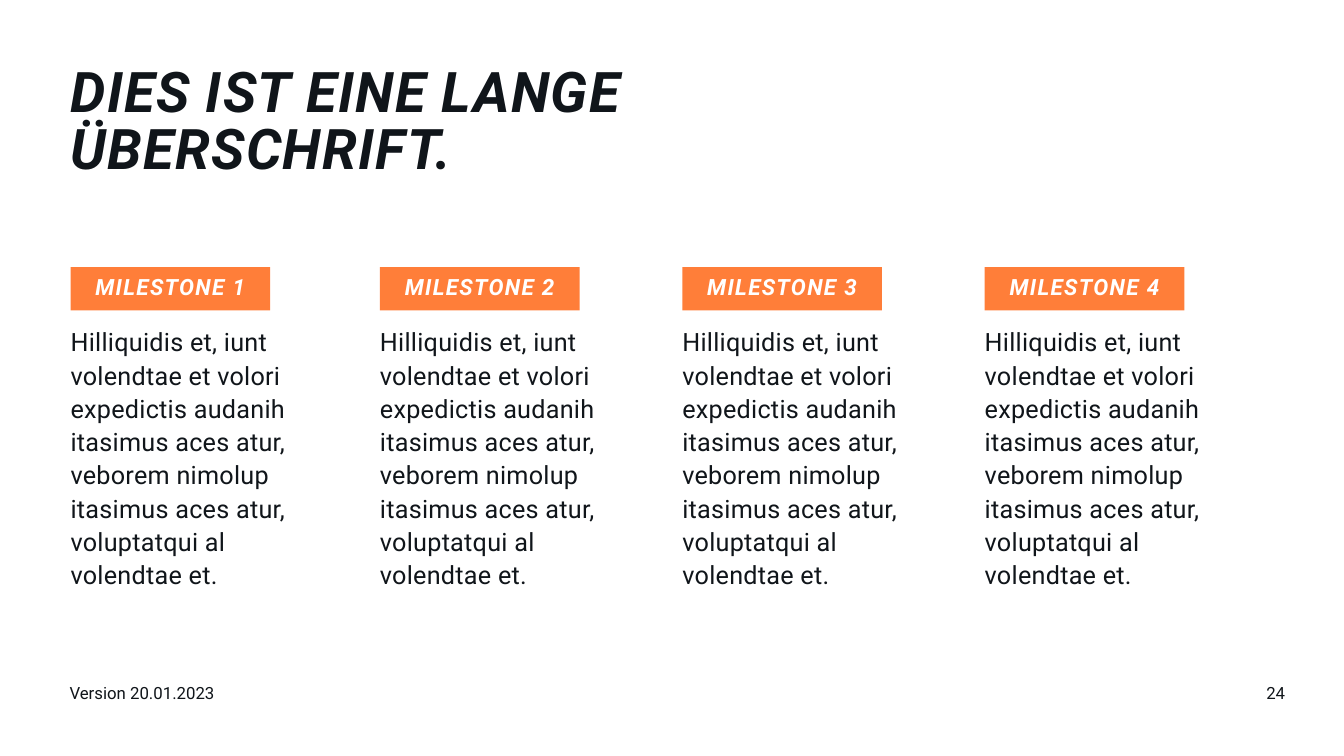
from dataclasses import dataclass
from pptx import Presentation
from pptx.dml.color import RGBColor as Rgb
from pptx.enum.shapes import MSO_SHAPE as Shape
from pptx.enum.text import MSO_ANCHOR as Anchor, PP_ALIGN as Align
from pptx.util import Pt


@dataclass(frozen=True)
class Theme:
    font: str = "Roboto"
    ink: str = "10151A"
    white: str = "FFFFFF"
    accent: str = "FF7E39"
    title: int = 40
    body: int = 18
    label: int = 16
    small: int = 12


class Deck:
    def __init__(self, slide, theme):
        self.slide = slide
        self.theme = theme

    def style(self, shape, text, size, color, align=Align.LEFT,
              lead=1.0, track=0, strong=False, anchor=Anchor.TOP):
        frame = shape.text_frame
        frame.word_wrap = True
        frame.vertical_anchor = anchor
        frame.margin_left = frame.margin_right = 0
        frame.margin_top = frame.margin_bottom = 0
        frame.text = text
        para = frame.paragraphs[0]
        para.alignment = align
        para.line_spacing = lead
        for run in para.runs:
            font = run.font
            font.name = self.theme.font
            font.size = Pt(size)
            font.bold = font.italic = strong
            font.color.rgb = Rgb.from_string(color)
            # Letter spacing in hundredths of a point
            run._r.get_or_add_rPr().set("spc", str(track))

    def text(self, x, y, w, h, text, size, **look):
        box = self.slide.shapes.add_textbox(Pt(x), Pt(y), Pt(w), Pt(h))
        self.style(box, text, size, self.theme.ink, **look)

    def tag(self, x, y, w, h, text):
        box = self.slide.shapes.add_shape(
            Shape.RECTANGLE, Pt(x), Pt(y), Pt(w), Pt(h))
        box.shadow.inherit = False
        box.fill.solid()
        box.fill.fore_color.rgb = Rgb.from_string(self.theme.accent)
        box.line.fill.background()
        self.style(box, text, self.theme.label, self.theme.white,
                   align=Align.CENTER, lead=0.85, track=100, strong=True,
                   anchor=Anchor.MIDDLE)


BODY = ("Hilliquidis et, iunt volendtae et volori expedictis audanih "
        "itasimus aces atur, veborem nimolup itasimus aces atur, "
        "voluptatqui al volendtae et.")
LEFT = 50.4
COLS = [LEFT] + [271.4 + 216 * step for step in range(3)]


def main():
    prs = Presentation()
    prs.slide_width, prs.slide_height = Pt(960), Pt(540)
    theme = Theme()
    deck = Deck(prs.slides.add_slide(prs.slide_layouts[6]), theme)

    # Title
    deck.text(LEFT, 47.5, 590.4, 80.6, "DIES IST EINE LANGE ÜBERSCHRIFT.",
              theme.title, lead=0.85, track=100, strong=True)

    # Milestone columns
    for num, x in enumerate(COLS, 1):
        deck.tag(x, 190.8, 142.6, 31, f"MILESTONE {num}")
        deck.text(x, 231.1, 173.5, 222.5, BODY, theme.body,
                  lead=1.1, track=20)

    # Footer
    deck.text(49.7, 487.4, 592.6, 28.8, "Version 20.01.2023", theme.small)
    deck.text(763.2, 487.4, 154.8, 28.8, "24", theme.small,
              align=Align.RIGHT)

    prs.save("out.pptx")


if __name__ == "__main__":
    main()
